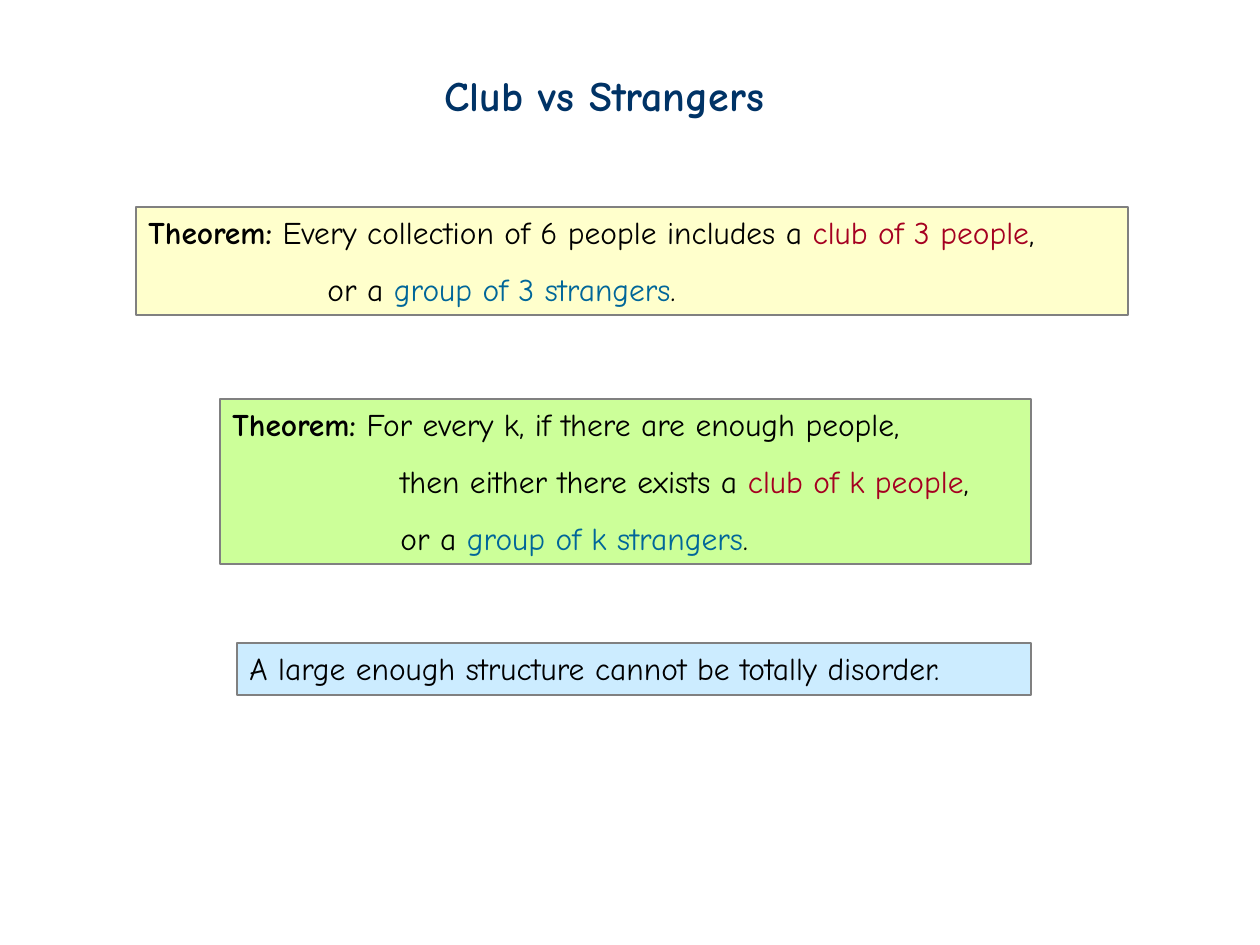
from dataclasses import dataclass

from pptx import Presentation
from pptx.dml.color import RGBColor
from pptx.enum.shapes import MSO_SHAPE
from pptx.enum.text import MSO_ANCHOR, PP_ALIGN
from pptx.util import Emu, Pt

RECT = MSO_SHAPE.RECTANGLE
TOP, MIDDLE = MSO_ANCHOR.TOP, MSO_ANCHOR.MIDDLE
LEFT = PP_ALIGN.LEFT
TITLE_ONLY = 5


@dataclass(frozen=True)
class Theme:
    font: str = "Comic Neue"
    title_size: int = 24
    body_size: int = 18
    title: str = "003366"
    text: str = "000000"
    club: str = "A50021"
    strangers: str = "006699"
    border: str = "808080"
    yellow: str = "FFFFCC"
    green: str = "CCFF99"
    blue: str = "CCECFF"


THEME = Theme()


def px(n):
    return Emu(round(n * 914400 / 126))


def rgb(value):
    return RGBColor.from_string(value)


def style_run(r, size, color, bold=False):
    r.font.name = THEME.font
    r.font.size = Pt(size)
    r.font.bold = bold
    r.font.color.rgb = rgb(color)


def place(s, box):
    s.left, s.top, s.width, s.height = map(px, box)


def add_title(slide, box, text):
    s = slide.shapes.title
    place(s, box)
    tf = s.text_frame
    tf.text = text
    tf.word_wrap = False
    tf.vertical_anchor = MIDDLE
    p = tf.paragraphs[0]
    p.alignment = LEFT
    style_run(p.runs[0], THEME.title_size, THEME.title, bold=True)


def add_statement(slide, box, fill, lines, indent=0):
    """Boxed text; each line is a list of (text, color, bold), later lines indented."""
    s = slide.shapes.add_shape(RECT, *map(px, box))
    s.shadow.inherit = False
    s.fill.solid()
    s.fill.fore_color.rgb = rgb(fill)
    s.line.color.rgb = rgb(THEME.border)
    s.line.width = Pt(0.75)
    tf = s.text_frame
    tf.word_wrap = True
    tf.vertical_anchor = TOP
    for i, line in enumerate(lines):
        p = tf.add_paragraph() if i else tf.paragraphs[0]
        p.alignment = LEFT
        if i:
            p.line_spacing = 1.5
            p_pr = p._p.get_or_add_pPr()
            p_pr.set("marL", str(px(indent)))
            p_pr.set("indent", "0")
        for text, color, bold in line:
            r = p.add_run()
            r.text = text
            style_run(r, THEME.body_size, color, bold)


def plain(text):
    return text, THEME.text, False


def club(text):
    return text, THEME.club, False


def strangers(text):
    return text, THEME.strangers, False


def build_slide(prs):
    slide = prs.slides.add_slide(prs.slide_layouts[TITLE_ONLY])
    heading = ("Theorem:", THEME.text, True)
    add_title(slide, (432, 63, 387, 63), "Club vs Strangers")
    add_statement(slide, (136, 207, 992, 108), THEME.yellow, [
        [heading, plain(" Every collection of 6 people includes a "),
         club("club of 3 people"), plain(",")],
        [plain("or a "), strangers("group of 3 strangers"), plain(".")],
    ], indent=179)
    add_statement(slide, (220, 399, 811, 165), THEME.green, [
        [heading, plain(" For every k, if there are enough people,")],
        [plain("then either there exists a "), club("club of k people"), plain(",")],
        [plain("or a "), strangers("group of k strangers"), plain(".")],
    ], indent=168)
    add_statement(slide, (237, 643, 794, 52), THEME.blue, [
        [plain("A large enough structure cannot be totally disorder.")],
    ])


def main():
    prs = Presentation()
    prs.slide_width, prs.slide_height = px(1260), px(945)
    build_slide(prs)
    prs.save("out.pptx")


if __name__ == "__main__":
    main()
